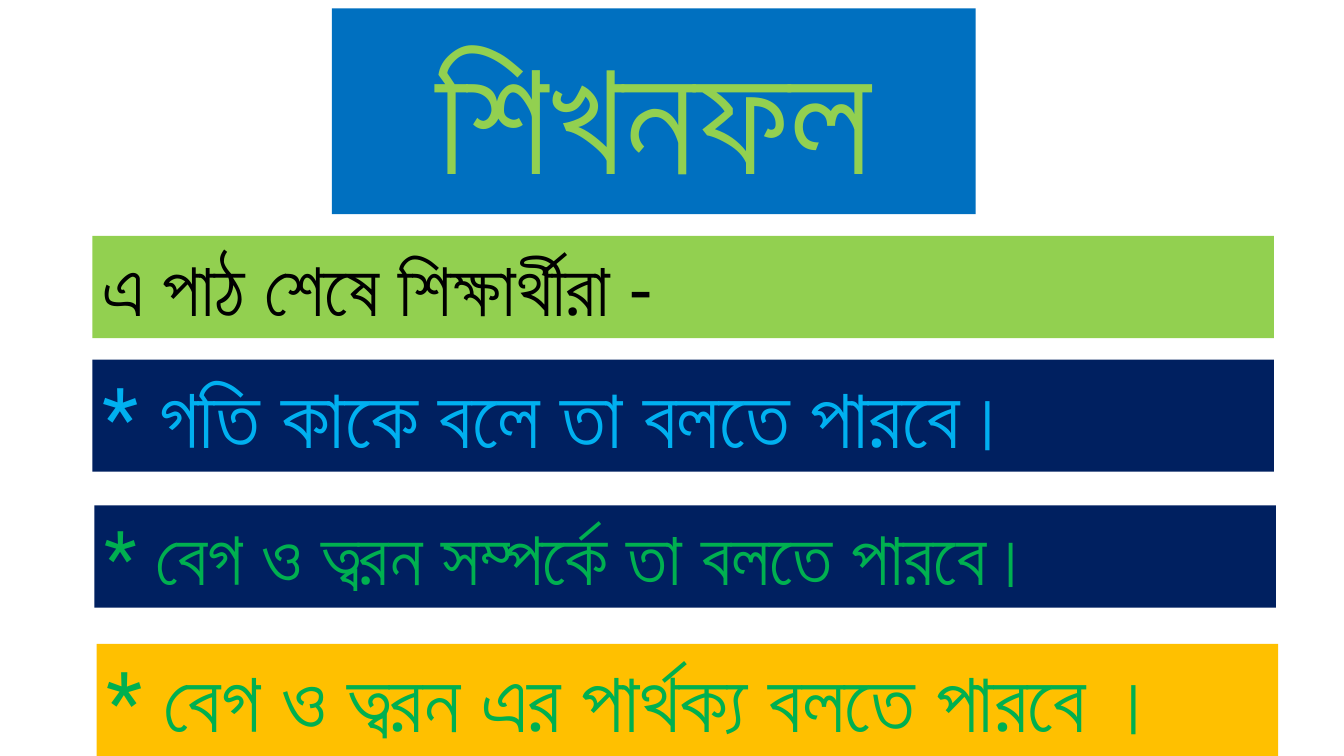
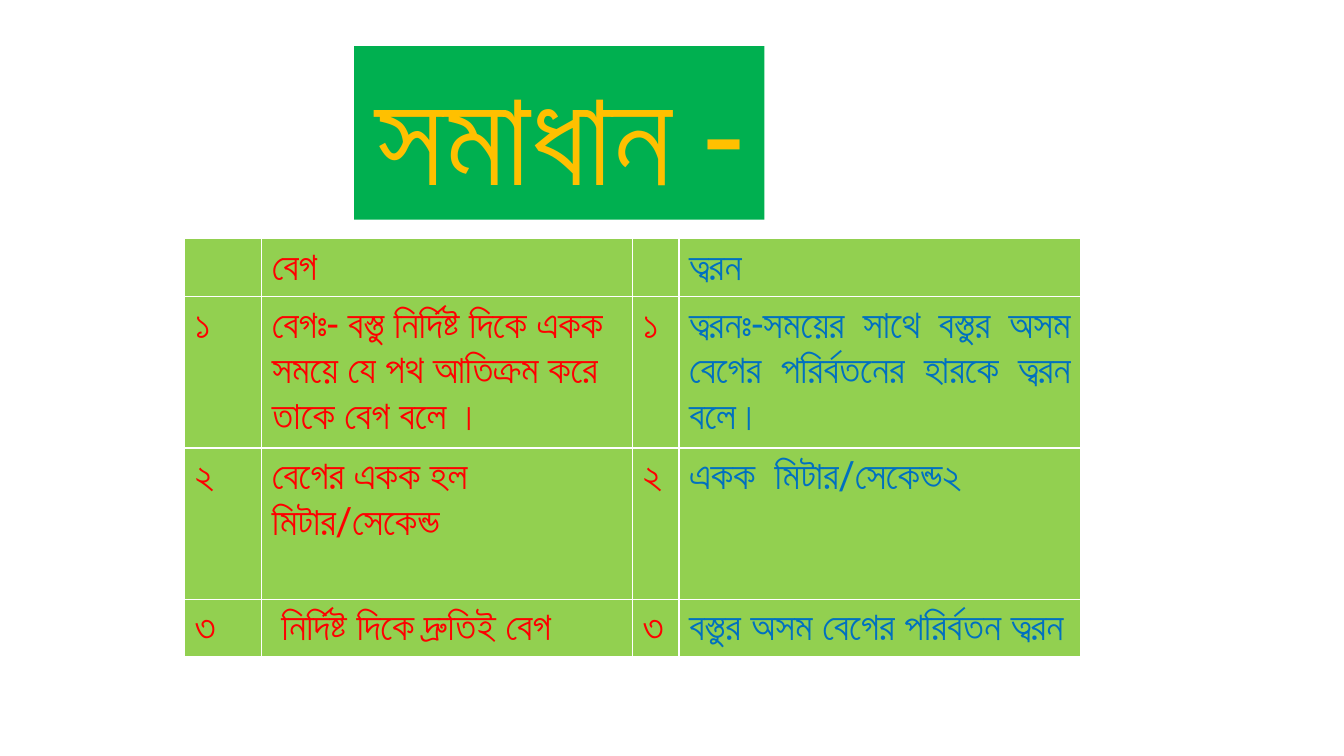
from lxml import etree
from pptx import Presentation
from pptx.dml.color import RGBColor
from pptx.enum import shapes, text
from pptx.oxml.ns import qn
from pptx.util import Pt

FONT = "Roboto"
DASH_FONT = "Calibri"
BLUE, NAVY, SKY = "0070C0", "002060", "00B0F0"
GREEN, LIME, AMBER = "00B050", "92D050", "FFC000"
RED, BLACK = "FF0000", "000000"

# Bands: left, top, height, fill, text colour, size, runs
BANDS = [
    (66, 168.5, 73, LIME, BLACK, 54,
     [("এ পাঠ শেষে শিক্ষার্থীরা ", FONT), ("-", DASH_FONT)]),
    (66, 257, 80, NAVY, SKY, 60, [("* গতি কাকে বলে তা বলতে পারবে।", FONT)]),
    (67.5, 361, 73, NAVY, GREEN, 54,
     [("* বেগ ও ত্বরন সম্পর্কে তা বলতে পারবে।", FONT)]),
    (69, 460, 80, AMBER, GREEN, 60,
     [("* বেগ ও ত্বরন এর পার্থক্য বলতে পারবে ।", FONT)]),
]
BAND_WIDTH = 844

# Comparison table
ROWS = [
    ["", "বেগ", "", "ত্বরন"],
    ["১", "বেগঃ- বস্তু নির্দিষ্ট দিকে একক সময়ে যে পথ আতিক্রম করে তাকে বেগ বলে ।",
     "১", "ত্বরনঃ-সময়ের সাথে বস্তুর অসম বেগের পরির্বতনের হারকে ত্বরন বলে।"],
    ["২", "বেগের একক হল মিটার/সেকেন্ড", "২", "একক  মিটার/সেকেন্ড২"],
    ["৩", "নির্দিষ্ট দিকে দ্রুতিই বেগ", "৩", "বস্তুর অসম বেগের পরির্বতন ত্বরন"],
]
COLUMN_WIDTHS = [55, 265, 33, 287]
COLUMN_COLORS = [RED, RED, RED, BLUE]
ROW_HEIGHTS = [41, 108, 108, 41]
JUSTIFIED = {(1, 3), (2, 3)}
INDENTED = (3, 1)


def color(value):
    return RGBColor.from_string(value)


def paint(target, value):
    target.fill.solid()
    target.fill.fore_color.rgb = color(value)


def format_run(run, size, value, font=FONT, bold=False):
    run.font.size = Pt(size)
    run.font.name = font
    run.font.bold = bold
    run.font.color.rgb = color(value)
    # Bengali text takes its typeface from the complex-script font
    etree.SubElement(run.font._element, qn("a:cs")).set("typeface", font)


def add_box(slide, left, top, width, height, fill, value, size, runs,
            align=text.PP_ALIGN.LEFT, wrap=True):
    shape = slide.shapes.add_shape(shapes.MSO_SHAPE.RECTANGLE, Pt(left),
                                   Pt(top), Pt(width), Pt(height))
    shape.shadow.inherit = False
    shape.line.fill.background()
    paint(shape, fill)
    frame = shape.text_frame
    frame.word_wrap = wrap
    frame.vertical_anchor = text.MSO_ANCHOR.TOP
    paragraph = frame.paragraphs[0]
    paragraph.alignment = align
    for words, font in runs:
        run = paragraph.add_run()
        run.text = words
        format_run(run, size, value, font)


def add_title(slide, left, top, width, height, fill, value, size, words):
    add_box(slide, left, top, width, height, fill, value, size,
            [(words, FONT)], text.PP_ALIGN.CENTER, wrap=False)


def add_comparison(slide, left, top):
    table = slide.shapes.add_table(
        len(ROWS), len(COLUMN_WIDTHS), Pt(left), Pt(top),
        Pt(sum(COLUMN_WIDTHS)), Pt(sum(ROW_HEIGHTS))).table
    for column, width in zip(table.columns, COLUMN_WIDTHS):
        column.width = Pt(width)
    for i, (row, height) in enumerate(zip(ROWS, ROW_HEIGHTS)):
        table.rows[i].height = Pt(height)
        for j, words in enumerate(row):
            cell = table.cell(i, j)
            paint(cell, LIME)
            paragraph = cell.text_frame.paragraphs[0]
            paragraph.font.size = Pt(28)
            if (i, j) in JUSTIFIED:
                paragraph.alignment = text.PP_ALIGN.JUSTIFY
            if (i, j) == INDENTED:
                cell.margin_left = Pt(14)
            if words:
                paragraph.text = words
                format_run(paragraph.runs[0], 28, COLUMN_COLORS[j],
                           bold=i == 0)


def main():
    presentation = Presentation()
    presentation.slide_width, presentation.slide_height = Pt(960), Pt(540)
    blank = presentation.slide_layouts[6]

    # Learning outcomes
    slide = presentation.slides.add_slide(blank)
    add_title(slide, 237, 6, 460, 147, BLUE, LIME, 115, "শিখনফল")
    for left, top, height, fill, value, size, runs in BANDS:
        add_box(slide, left, top, BAND_WIDTH, height, fill, value, size, runs)

    # Solution
    slide = presentation.slides.add_slide(blank)
    add_title(slide, 253, 33, 293, 124, GREEN, AMBER, 96, "সমাধান -")
    add_comparison(slide, 132, 170.5)

    presentation.save("out.pptx")


if __name__ == "__main__":
    main()
